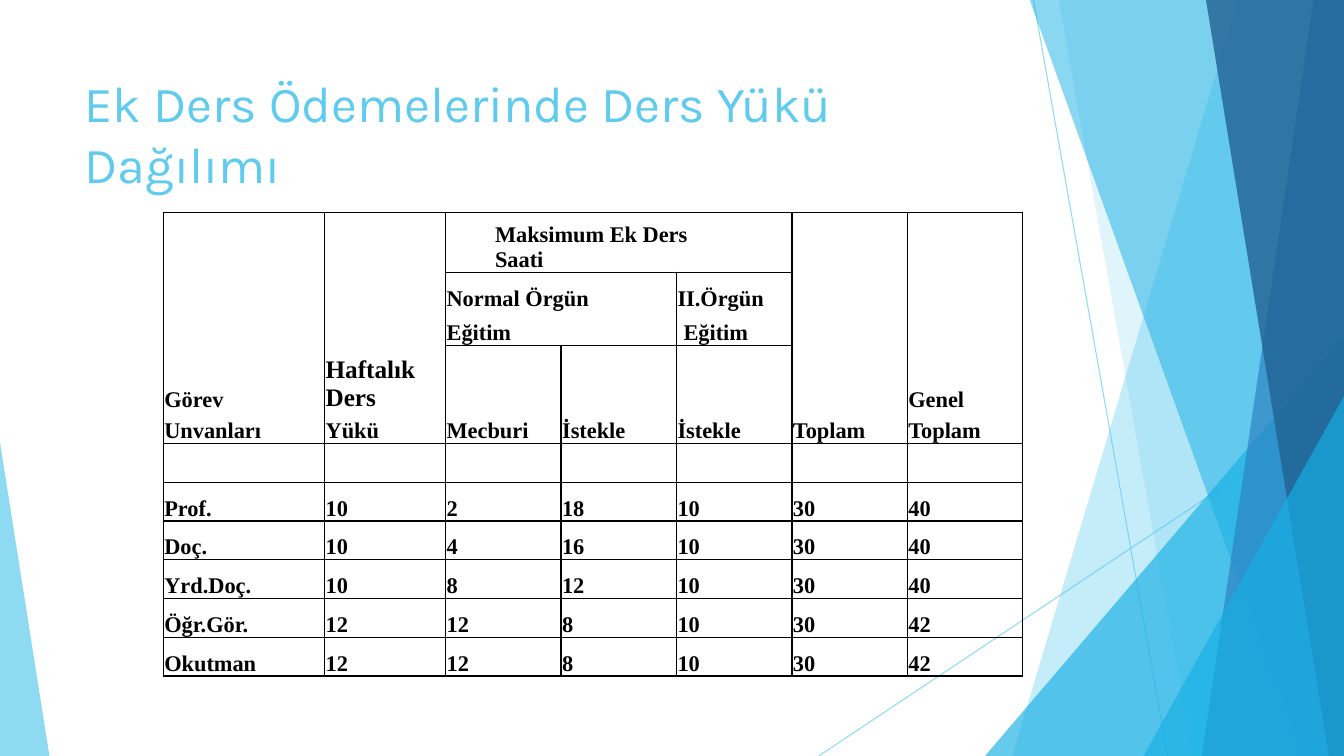
from lxml import etree
from pptx import Presentation, util as u
from pptx.dml.color import RGBColor
from pptx.enum import shapes, text
from pptx.oxml import ns

COLORS = {"sky": "5FCBEF", "cyan": "17B0E4", "blue": "2E83C3", "navy": "226292", "black": "000000"}
HEADER_ROWS = 5
GROUP_COLUMNS = (2, 3, 4)


def write_text(frame, words, size=16, font="Times New Roman", color="black", bold=True, indent=0):
    para = frame.paragraphs[0]
    para.alignment = text.PP_ALIGN.LEFT
    if indent:
        para._p.get_or_add_pPr().set("indent", str(u.Inches(indent)))
    span = para.add_run()
    span.text = words
    span.font.size = u.Pt(size)
    span.font.name = font
    span.font.bold = bold
    span.font.color.rgb = RGBColor.from_string(COLORS[color])


class SlideBuilder:
    def __init__(self, deck):
        self.slide = deck.slides.add_slide(deck.slide_layouts[5])
        self.shapes = self.slide.shapes

    def set_alpha(self, element, percent):
        for color in element.iter(ns.qn("a:srgbClr")):
            etree.SubElement(color, ns.qn("a:alpha"), val=str(percent * 1000))

    def paint(self, shape, color, percent):
        shape.shadow.inherit = False
        shape.fill.solid()
        shape.fill.fore_color.rgb = RGBColor.from_string(COLORS[color])
        shape.line.fill.background()
        self.set_alpha(shape._element.spPr, percent)

    def title(self, words, left, top, width, height):
        box = self.shapes.title
        box.left, box.top, box.width, box.height = map(u.Inches, (left, top, width, height))
        frame = box.text_frame
        frame.word_wrap = True
        frame.auto_size = text.MSO_AUTO_SIZE.NONE
        frame.vertical_anchor = text.MSO_ANCHOR.TOP
        write_text(frame, words, size=36, font="Karla", color="sky", bold=False)

    def line(self, start, end, color="sky", percent=70):
        line = self.shapes.add_connector(
            shapes.MSO_CONNECTOR.STRAIGHT, *map(u.Inches, start + end))
        line.line.width = u.Pt(0.75)
        line.line.color.rgb = RGBColor.from_string(COLORS[color])
        properties = line._element.spPr
        self.set_alpha(properties, percent)
        etree.SubElement(properties, ns.qn("a:effectLst"))

    def band(self, top_left, bottom_left, color, percent):
        """Band from a slanted left edge to the right edge of the slide."""
        points = [(top_left, -0.01), (13.33, -0.01), (13.33, 7.5), (bottom_left, 7.5)]
        points = [(u.Inches(x), u.Inches(y)) for x, y in points]
        builder = self.shapes.build_freeform(*points[0])
        builder.add_line_segments(points[1:], close=True)
        self.paint(builder.convert_to_shape(), color, percent)

    def triangle(self, left, top, width, height, peak, color, percent):
        shape = self.shapes.add_shape(
            shapes.MSO_SHAPE.ISOSCELES_TRIANGLE, *map(u.Inches, (left, top, width, height)))
        shape.adjustments[0] = peak
        self.paint(shape, color, percent)

    def table(self, left, top, widths, heights):
        frame = self.shapes.add_table(
            len(heights), len(widths),
            *map(u.Inches, (left, top, sum(widths), sum(heights))))
        table = frame.table
        table.first_row = table.horz_banding = False
        for column, width in zip(table.columns, widths):
            column.width = u.Inches(width)
        for row, height in zip(table.rows, heights):
            row.height = u.Inches(height)
        return table

    def cell(self, cell, words, visible_sides, indent=0, **style):
        cell.margin_left = cell.margin_right = cell.margin_top = u.Inches(0.01)
        cell.margin_bottom = 0
        cell.vertical_anchor = text.MSO_ANCHOR.BOTTOM
        properties = cell._tc.get_or_add_tcPr()
        for index, side in enumerate("LRTB"):
            line = etree.Element(ns.qn("a:ln" + side), w=str(u.Pt(1)))
            if side in visible_sides:
                fill = etree.SubElement(line, ns.qn("a:solidFill"))
                etree.SubElement(fill, ns.qn("a:srgbClr"), val=COLORS["black"])
            else:
                etree.SubElement(line, ns.qn("a:noFill"))
            properties.insert(index, line)
        cell.fill.background()
        if words:
            write_text(cell.text_frame, words, indent=indent, **style)
        else:
            cell.text_frame.paragraphs[0].font.size = u.Pt(16)


def line_below(row, column):
    """Header cells that read as one block have no line between them."""
    if row >= HEADER_ROWS - 1:
        return True
    return column in GROUP_COLUMNS and row in (0, 2)


def borders(row, column):
    sides = "LRTB"
    if not line_below(row, column):
        sides = sides.replace("B", "")
    if row and not line_below(row - 1, column):
        sides = sides.replace("T", "")
    if row == 2 and column in (2, 3):
        sides = sides.replace("R" if column == 2 else "L", "")
    return sides


def main():
    deck = Presentation()
    deck.slide_width, deck.slide_height = u.Inches(13.33), u.Inches(7.5)
    page = SlideBuilder(deck)

    # Facets behind the content
    page.line((10.25, 0), (11.58, 7.5))
    page.line((13.33, 4.03), (8.12, 7.5))
    page.band(12.28, 10.04, "sky", 36)
    page.band(10.5, 11.83, "sky", 20)
    page.triangle(9.77, 3.33, 3.56, 4.17, 1, "cyan", 66)
    page.band(10.21, 12.91, "cyan", 50)
    page.band(13.03, 11.92, "blue", 70)
    page.band(11.96, 13.18, "navy", 80)
    page.triangle(11.34, 3.93, 1.99, 3.57, 1, "cyan", 66)
    page.triangle(0, 4.39, 0.49, 3.11, 0, "sky", 70)

    page.title("Ek Ders Ödemelerinde Ders Yükü Dağılımı", 0.74, 0.67, 9.4, 1.44)

    # Course load table
    rows = [
        ["", "", "Maksimum Ek Ders Saati", "", "", "", ""],
        ["", "", "Normal Örgün", "", "II.Örgün", "", ""],
        ["", "", "Eğitim", "", "Eğitim", "", ""],
        ["Görev", "Haftalık Ders", "", "", "", "", "Genel"],
        ["Unvanları", "Yükü", "Mecburi", "İstekle", "İstekle", "Toplam", "Toplam"],
        [""] * 7,
        ["Prof.", "10", "2", "18", "10", "30", "40"],
        ["Doç.", "10", "4", "16", "10", "30", "40"],
        ["Yrd.Doç.", "10", "8", "12", "10", "30", "40"],
        ["Öğr.Gör.", "12", "12", "8", "10", "30", "42"],
        ["Okutman", "12", "12", "8", "10", "30", "42"],
    ]
    table = page.table(1.62, 2.11, [1.6, 1.2] + [1.145] * 5,
                       [0.59, 0.39, 0.34, 0.66, 0.31] + [0.385] * 6)
    formats = {(2, 4): {"indent": 0.06}, (3, 1): {"size": 18}}
    for r, row in enumerate(rows):
        for c, words in enumerate(row):
            page.cell(table.cell(r, c), words, borders(r, c), **formats.get((r, c), {}))
    table.cell(0, 2).merge(table.cell(0, 4))
    table.cell(1, 2).merge(table.cell(1, 3))
    heading = table.cell(0, 2)
    heading.margin_left, heading.margin_right = u.Inches(0.49), u.Inches(0.8)

    deck.save("out.pptx")


if __name__ == "__main__":
    main()
